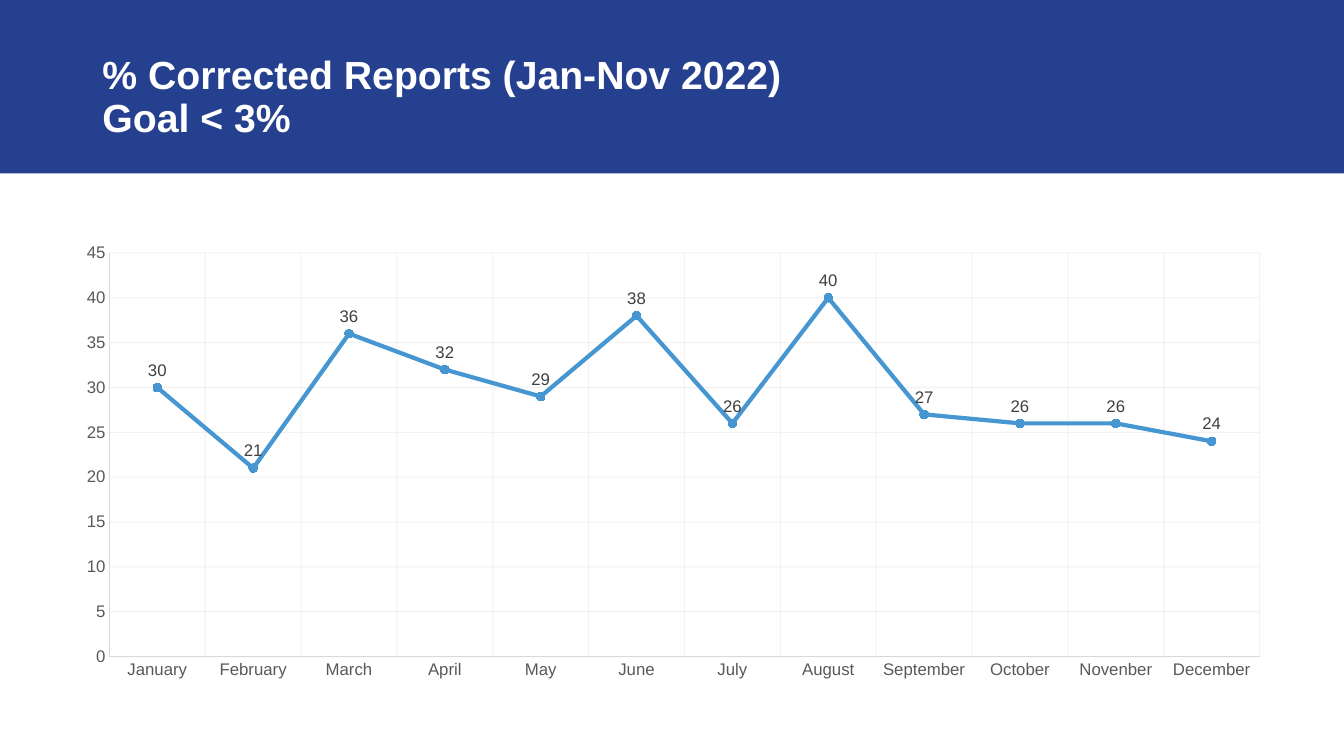
from lxml import etree
from pptx import Presentation
from pptx.chart.data import CategoryChartData
from pptx.dml.color import RGBColor
from pptx.enum.chart import XL_CHART_TYPE, XL_LABEL_POSITION, XL_MARKER_STYLE, XL_TICK_MARK
from pptx.enum.shapes import MSO_SHAPE
from pptx.enum.text import MSO_ANCHOR, MSO_AUTO_SIZE, PP_ALIGN
from pptx.oxml.ns import qn
from pptx.util import Pt

LINE_MARKERS = XL_CHART_TYPE.LINE_MARKERS
ABOVE = XL_LABEL_POSITION.ABOVE
CIRCLE = XL_MARKER_STYLE.CIRCLE
NO_TICK = XL_TICK_MARK.NONE
RECTANGLE = MSO_SHAPE.RECTANGLE
MIDDLE = MSO_ANCHOR.MIDDLE
NO_AUTOFIT = MSO_AUTO_SIZE.NONE
LEFT = PP_ALIGN.LEFT

FONT = "Arial"
NAVY, BLUE, WHITE = "25408F", "4696D2", "FFFFFF"
GRID_GREY, AXIS_GREY, LABEL_GREY = "D9D9D9", "595959", "404040"
SLIDE_WIDTH, SLIDE_HEIGHT = 960, 540

CORRECTED_REPORTS = {
    "January": 30, "February": 21, "March": 36, "April": 32,
    "May": 29, "June": 38, "July": 26, "August": 40,
    "September": 27, "October": 26, "Novenber": 26, "December": 24,
}
# Inner plot area as fractions of the chart box
PLOT_LAYOUT = {"x": 0.04, "y": 0.04, "w": 0.94, "h": 0.89}


def color(hex_value):
    return RGBColor.from_string(hex_value)


def style_font(font, size, hex_value, bold=False):
    font.name = FONT
    font.size = Pt(size)
    font.bold = bold
    font.color.rgb = color(hex_value)


def style_line(line, hex_value, width):
    line.color.rgb = color(hex_value)
    line.width = Pt(width)


def add_header(slide, left, top, width, height):
    # Band, placed behind the title
    band = slide.shapes.add_shape(RECTANGLE, Pt(left), Pt(top), Pt(width), Pt(height))
    band.shadow.inherit = False
    band.fill.solid()
    band.fill.fore_color.rgb = color(NAVY)
    band.line.fill.background()
    title = slide.shapes.title
    title.element.addprevious(band.element)

    # Title
    title.left, title.top = Pt(left + 66), Pt(top + 18)
    title.width, title.height = Pt(width - 132), Pt(height - 19.5)
    frame = title.text_frame
    frame.text = "% Corrected Reports (Jan-Nov 2022)\vGoal < 3%"
    frame.word_wrap = True
    frame.auto_size = NO_AUTOFIT
    frame.vertical_anchor = MIDDLE
    frame.margin_left = frame.margin_right = Pt(7.2)
    frame.margin_top = frame.margin_bottom = Pt(3.6)
    paragraph = frame.paragraphs[0]
    paragraph.alignment = LEFT
    paragraph.line_spacing = 0.9
    for run in paragraph.runs:
        style_font(run.font, 28, WHITE, bold=True)


def style_axis(axis):
    axis.major_tick_mark = axis.minor_tick_mark = NO_TICK
    style_font(axis.tick_labels.font, 12, AXIS_GREY)
    style_line(axis.format.line, GRID_GREY, 0.25)
    axis.has_major_gridlines = True
    gridlines = axis.major_gridlines
    style_line(gridlines.format.line, GRID_GREY, 0.75)
    # Gridline transparency
    grid_color = gridlines.element.find(f"{qn('c:majorGridlines')}//{qn('a:srgbClr')}")
    etree.SubElement(grid_color, qn("a:alpha")).set("val", "32000")


def set_plot_layout(chart):
    plot_area = chart.element.find(f".//{qn('c:plotArea')}")
    for automatic in plot_area.findall(qn("c:layout")):
        plot_area.remove(automatic)
    layout = etree.Element(qn("c:layout"))
    plot_area.insert(0, layout)
    manual = etree.SubElement(layout, qn("c:manualLayout"))
    settings = {"layoutTarget": "inner", "xMode": "edge", "yMode": "edge", **PLOT_LAYOUT}
    for tag, value in settings.items():
        etree.SubElement(manual, qn(f"c:{tag}")).set("val", str(value))


def add_report_chart(slide, left, top, width, height):
    data = CategoryChartData()
    data.categories = list(CORRECTED_REPORTS)
    data.add_series("Series 1", list(CORRECTED_REPORTS.values()))
    chart = slide.shapes.add_chart(
        LINE_MARKERS, Pt(left), Pt(top), Pt(width), Pt(height), data).chart
    chart.has_title = False
    chart.has_legend = False
    style_font(chart.font, 10, "000000")
    set_plot_layout(chart)

    # Axes
    style_axis(chart.category_axis)
    style_axis(chart.value_axis)
    chart.value_axis.minimum_scale = 0
    chart.value_axis.maximum_scale = 45
    chart.value_axis.major_unit = 5

    # Monthly line with markers
    plot = chart.plots[0]
    plot.vary_by_categories = False
    reports = plot.series[0]
    reports.smooth = False
    style_line(reports.format.line, BLUE, 3)
    marker = reports.marker
    marker.style = CIRCLE
    marker.size = 6
    marker.format.fill.solid()
    marker.format.fill.fore_color.rgb = color(BLUE)
    style_line(marker.format.line, BLUE, 0.75)

    # Value labels
    labels = reports.data_labels
    labels.show_value = True
    labels.position = ABOVE
    style_font(labels.font, 12, LABEL_GREY)


def main():
    presentation = Presentation()
    presentation.slide_width = Pt(SLIDE_WIDTH)
    presentation.slide_height = Pt(SLIDE_HEIGHT)
    slide = presentation.slides.add_slide(presentation.slide_layouts.get_by_name("Title Only"))
    add_header(slide, 0, 0, SLIDE_WIDTH, 123.84)
    add_report_chart(slide, 43.2, 167.76, 874.08, 324)
    presentation.save("out.pptx")


if __name__ == "__main__":
    main()
